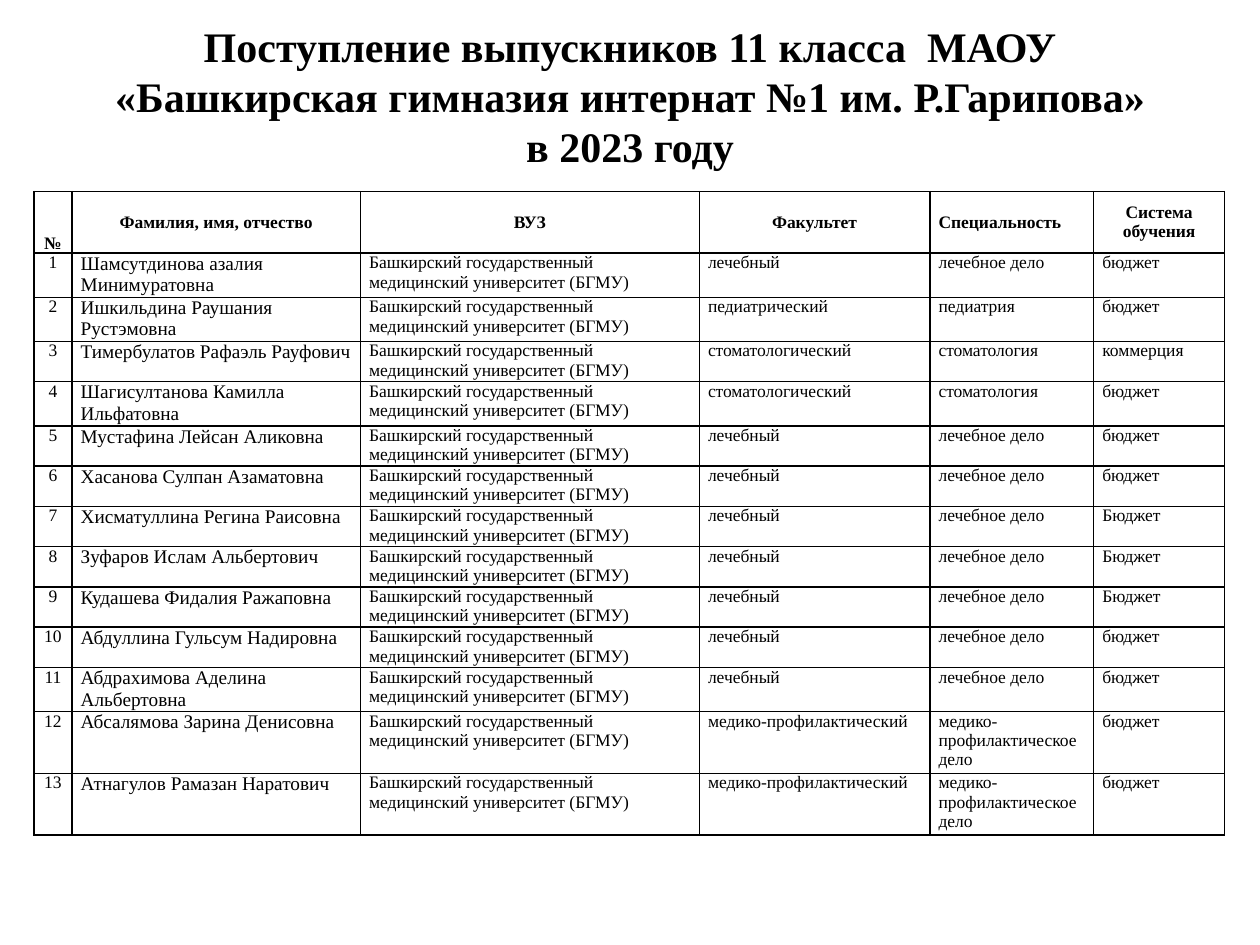
from lxml import etree
from pptx import Presentation
from pptx.dml.color import RGBColor
from pptx.enum.text import MSO_ANCHOR as ANCHOR, PP_ALIGN as ALIGN
from pptx.oxml import parse_xml
from pptx.oxml.ns import nsdecls
from pptx.util import Inches, Pt

FONT = "Times New Roman"
BLACK = "000000"

TITLE = ("Поступление выпускников 11 класса  МАОУ "
         "«Башкирская гимназия интернат №1 им. Р.Гарипова»\vв 2023 году")
HEADERS = ["№", "Фамилия, имя, отчество", "ВУЗ", "Факультет",
           "Специальность", "Система\nобучения"]
UNIVERSITY = "Башкирский государственный медицинский университет (БГМУ)"
GENERAL = ("лечебный", "лечебное дело")
PEDIATRIC = ("педиатрический", "педиатрия")
DENTAL = ("стоматологический", "стоматология")
PREVENTIVE = ("медико-профилактический", "медико- профилактическое дело")
# Name, (faculty, speciality), funding
GRADUATES = [
    ("Шамсутдинова азалия Минимуратовна", GENERAL, "бюджет"),
    ("Ишкильдина Раушания Рустэмовна", PEDIATRIC, "бюджет"),
    ("Тимербулатов Рафаэль Рауфович", DENTAL, "коммерция"),
    ("Шагисултанова Камилла Ильфатовна", DENTAL, "бюджет"),
    ("Мустафина Лейсан Аликовна", GENERAL, "бюджет"),
    ("Хасанова Сулпан Азаматовна", GENERAL, "бюджет"),
    ("Хисматуллина Регина Раисовна", GENERAL, "Бюджет"),
    ("Зуфаров Ислам Альбертович", GENERAL, "Бюджет"),
    ("Кудашева Фидалия Ражаповна", GENERAL, "Бюджет"),
    ("Абдуллина Гульсум Надировна", GENERAL, "бюджет"),
    ("Абдрахимова Аделина Альбертовна", GENERAL, "бюджет"),
    ("Абсалямова Зарина Денисовна", PREVENTIVE, "бюджет"),
    ("Атнагулов Рамазан Наратович", PREVENTIVE, "бюджет"),
]
COL_WIDTHS = [0.3, 2.29, 2.69, 1.83, 1.3, 1.04]
ROW_HEIGHTS = [0.49, 0.35, 0.35, 0.32, 0.35] + [0.32] * 6 + [0.35, 0.49, 0.49]
BODY_ALIGNS = [ALIGN.CENTER] + [ALIGN.LEFT] * 4 + [ALIGN.JUSTIFY]


def rgb(color):
    return RGBColor.from_string(color)


def format_text(tf, size, bold, align):
    for p in tf.paragraphs:
        p.alignment = align
        for r in p.runs:
            r.font.name = FONT
            r.font.size = Pt(size)
            r.font.bold = bold
            r.font.color.rgb = rgb(BLACK)


def add_borders(cell, color=BLACK, width=1):
    tcPr = cell._tc.get_or_add_tcPr()
    for i, side in enumerate(("lnL", "lnR", "lnT", "lnB")):
        tcPr.insert(i, parse_xml(
            f'<a:{side} {nsdecls("a")} w="{Pt(width)}"><a:solidFill>'
            f'<a:srgbClr val="{color}"/></a:solidFill></a:{side}>'))


def fill_cell(cell, text, size, bold, align, anchor):
    cell.fill.background()
    add_borders(cell)
    cell.margin_left = cell.margin_right = Inches(0.07)
    cell.margin_top = cell.margin_bottom = 0
    cell.vertical_anchor = anchor
    cell.text_frame.text = text
    format_text(cell.text_frame, size, bold, align)


def place_title(slide, left, top, width, height):
    title = slide.shapes.title
    title.left, title.top = Inches(left), Inches(top)
    title.width, title.height = Inches(width), Inches(height)
    tf = title.text_frame
    tf.text = TITLE
    tf.word_wrap = True
    tf.vertical_anchor = ANCHOR.MIDDLE
    format_text(tf, 24, True, ALIGN.CENTER)


def add_graduates_table(slide, left, top):
    frame = slide.shapes.add_table(
        len(ROW_HEIGHTS), len(COL_WIDTHS), Inches(left), Inches(top),
        Inches(sum(COL_WIDTHS)), Inches(sum(ROW_HEIGHTS)))
    table = frame.table
    table.horz_banding = False
    for col, width in zip(table.columns, COL_WIDTHS):
        col.width = Inches(width)
    for row, height in zip(table.rows, ROW_HEIGHTS):
        row.height = Inches(height)

    # Header row: the number sign sits at the bottom
    for c, text in enumerate(HEADERS):
        align = ALIGN.LEFT if text == "Специальность" else ALIGN.CENTER
        anchor = ANCHOR.BOTTOM if c == 0 else ANCHOR.MIDDLE
        fill_cell(table.cell(0, c), text, 10, True, align, anchor)

    # One row per graduate, names slightly larger
    for n, (name, course, funding) in enumerate(GRADUATES, 1):
        values = (str(n), name, UNIVERSITY, *course, funding)
        for c, (text, align) in enumerate(zip(values, BODY_ALIGNS)):
            size = 11 if c == 1 else 10
            fill_cell(table.cell(n, c), text, size, False, align, ANCHOR.TOP)


def main():
    prs = Presentation()
    prs.slide_width, prs.slide_height = Inches(10), Inches(7.5)
    slide = prs.slides.add_slide(prs.slide_layouts[5])
    place_title(slide, 0.5, 0.21, 9, 1.1)
    add_graduates_table(slide, 0.27, 1.52)
    prs.save("out.pptx")


if __name__ == "__main__":
    main()
